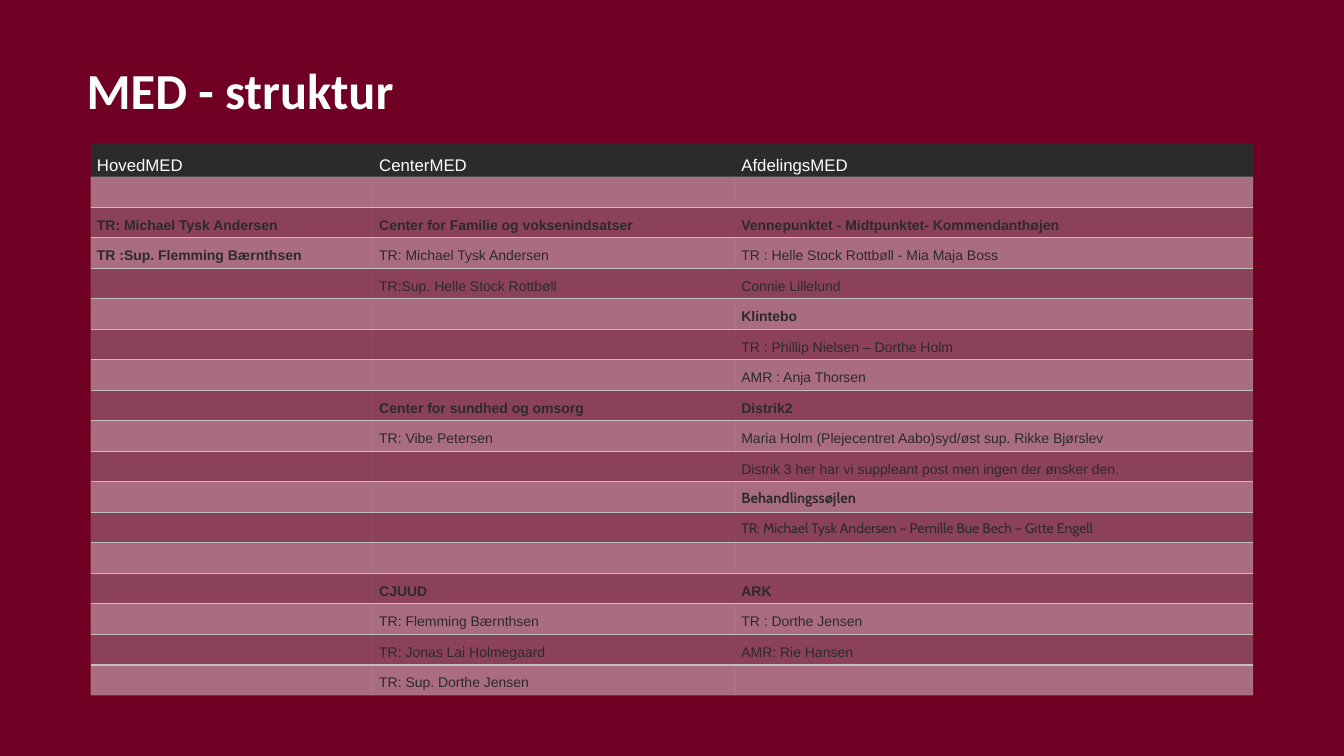
from dataclasses import dataclass

from lxml import etree
from pptx import Presentation
from pptx.dml.color import RGBColor
from pptx.enum.text import MSO_ANCHOR, MSO_AUTO_SIZE, PP_ALIGN
from pptx.oxml.ns import qn
from pptx.util import Pt

LEFT = PP_ALIGN.LEFT
MIDDLE = MSO_ANCHOR.MIDDLE
TOP = MSO_ANCHOR.TOP
NO_AUTOFIT = MSO_AUTO_SIZE.NONE
NO_STYLE_NO_GRID = "{2D5ABB26-0587-4C30-8999-92F81FD0307C}"


@dataclass(frozen=True)
class Theme:
    background: str = "700023"
    white: str = "FFFFFF"
    dark: str = "2C2A2B"
    gray: str = "BFBFBF"
    light: str = "F2F2F2"
    gray_opacity: int = 35
    light_opacity: int = 45
    title_font: str = "Calibri"
    table_font: str = "Arial"
    accent_font: str = "Cabin"
    title_size: float = 36
    header_size: float = 12
    body_size: float = 10
    accent_size: float = 10.5


THEME = Theme()


@dataclass(frozen=True)
class Entry:
    text: str = ""
    bold: bool = False
    font: str = THEME.table_font
    size: float = THEME.body_size
    color: str = THEME.dark
    line_spacing: float = 1.15
    space_after: float = 8


def group(text):
    return Entry(text, bold=True)


def accent(text, bold, size):
    return Entry(text, bold, THEME.accent_font, size, line_spacing=1, space_after=0)


def header(text):
    return Entry(text, size=THEME.header_size, color=THEME.white)


EMPTY = Entry()
HEADERS = [header("HovedMED"), header("CenterMED"), header("AfdelingsMED")]
ROWS = [
    [EMPTY, EMPTY, EMPTY],
    [group("TR: Michael Tysk Andersen"), group("Center for Familie og voksenindsatser"),
     group("Vennepunktet - Midtpunktet- Kommendanthøjen")],
    [group("TR :Sup. Flemming Bærnthsen"), Entry("TR: Michael Tysk Andersen"),
     Entry("TR : Helle Stock Rottbøll - Mia Maja Boss")],
    [EMPTY, Entry("TR:Sup. Helle Stock Rottbøll"), Entry("Connie Lillelund")],
    [EMPTY, EMPTY, group("Klintebo")],
    [EMPTY, EMPTY, Entry("TR : Phillip Nielsen – Dorthe Holm")],
    [EMPTY, EMPTY, Entry("AMR : Anja Thorsen")],
    [EMPTY, group("Center for sundhed og omsorg"), group("Distrik2")],
    [EMPTY, Entry("TR: Vibe Petersen"),
     Entry("Maria Holm (Plejecentret Aabo)syd/øst sup. Rikke Bjørslev")],
    [EMPTY, EMPTY, Entry("Distrik 3 her har vi suppleant post men ingen der ønsker den.")],
    [EMPTY, EMPTY, accent("Behandlingssøjlen", True, THEME.accent_size)],
    [EMPTY, EMPTY, accent("TR: Michael Tysk Andersen – Pernille Bue Bech – Gitte Engell",
                          False, THEME.body_size)],
    [EMPTY, EMPTY, EMPTY],
    [EMPTY, group("CJUUD"), group("ARK")],
    [EMPTY, Entry("TR: Flemming Bærnthsen"), Entry("TR : Dorthe Jensen")],
    [EMPTY, Entry("TR: Jonas Lai Holmegaard"), Entry("AMR: Rie Hansen")],
    [EMPTY, Entry("TR: Sup. Dorthe Jensen"), EMPTY],
]
COLUMN_WIDTHS = [201.6, 258.7, 370]
HEADER_HEIGHT = 24
ROW_HEIGHT = 21.8


def format_run(run, font, size, color, bold):
    run.font.name = font
    run.font.size = Pt(size)
    run.font.bold = bold
    run.font.color.rgb = RGBColor.from_string(color)


def add_title(slide, text):
    title = slide.shapes.title
    title.left, title.top, title.width, title.height = Pt(54.7), Pt(43.2), Pt(656), Pt(46.8)
    frame = title.text_frame
    frame.text = text
    frame.auto_size = NO_AUTOFIT
    frame.vertical_anchor = MIDDLE
    paragraph = frame.paragraphs[0]
    paragraph.alignment = LEFT
    paragraph.line_spacing = 0.9
    format_run(paragraph.runs[0], THEME.title_font, THEME.title_size, THEME.white, True)


def fill_cell(cell, color, opacity=100):
    cell.fill.solid()
    cell.fill.fore_color.rgb = RGBColor.from_string(color)
    if opacity < 100:
        color_element = cell.fill._xPr.find(qn("a:solidFill"))[0]
        etree.SubElement(color_element, qn("a:alpha"), val=str(opacity * 1000))


def add_border(cell, side):
    """Draw a thin gray rule; side is lnT or lnB."""
    line = etree.Element(qn(f"a:{side}"), w=str(Pt(1)))
    solid = etree.SubElement(line, qn("a:solidFill"))
    etree.SubElement(solid, qn("a:srgbClr"), val=THEME.gray)
    cell._tc.get_or_add_tcPr().insert(0, line)


def write_cell(cell, entry, anchor):
    cell.margin_left = cell.margin_right = Pt(4.5)
    cell.margin_top, cell.margin_bottom = Pt(5.7), Pt(0)
    cell.vertical_anchor = anchor
    paragraph = cell.text_frame.paragraphs[0]
    paragraph.line_spacing = entry.line_spacing
    paragraph.space_after = Pt(entry.space_after)
    if entry.text:
        paragraph.text = entry.text
        format_run(paragraph.runs[0], entry.font, entry.size, entry.color, entry.bold)
    else:
        etree.SubElement(paragraph._p, qn("a:endParaRPr"), sz=str(int(entry.size * 100)))


def add_structure_table(slide):
    height = HEADER_HEIGHT + ROW_HEIGHT * len(ROWS)
    frame = slide.shapes.add_table(len(ROWS) + 1, len(HEADERS), Pt(64.8), Pt(102.2),
                                   Pt(sum(COLUMN_WIDTHS)), Pt(height))
    table = frame.table
    table._tbl.tblPr.find(qn("a:tableStyleId")).text = NO_STYLE_NO_GRID
    table.first_row = table.horz_banding = False
    for column, width in zip(table.columns, COLUMN_WIDTHS):
        column.width = Pt(width)
    for row in table.rows:
        row.height = Pt(ROW_HEIGHT)
    table.rows[0].height = Pt(HEADER_HEIGHT)

    for cell, entry in zip(table.rows[0].cells, HEADERS):
        write_cell(cell, entry, MIDDLE)
        fill_cell(cell, THEME.dark)
    for index, entries in enumerate(ROWS, start=1):
        for cell, entry in zip(table.rows[index].cells, entries):
            write_cell(cell, entry, TOP)
            if index % 2 == 0:
                fill_cell(cell, THEME.gray, THEME.gray_opacity)
                add_border(cell, "lnT")
            else:
                fill_cell(cell, THEME.light, THEME.light_opacity)
                if index < len(ROWS):
                    add_border(cell, "lnB")


def main():
    presentation = Presentation()
    presentation.slide_width, presentation.slide_height = Pt(960), Pt(540)
    slide = presentation.slides.add_slide(presentation.slide_layouts[0])
    slide.background.fill.solid()
    slide.background.fill.fore_color.rgb = RGBColor.from_string(THEME.background)
    subtitle = slide.placeholders[1].element
    subtitle.getparent().remove(subtitle)
    add_title(slide, "MED - struktur")
    add_structure_table(slide)
    presentation.save("out.pptx")


if __name__ == "__main__":
    main()
